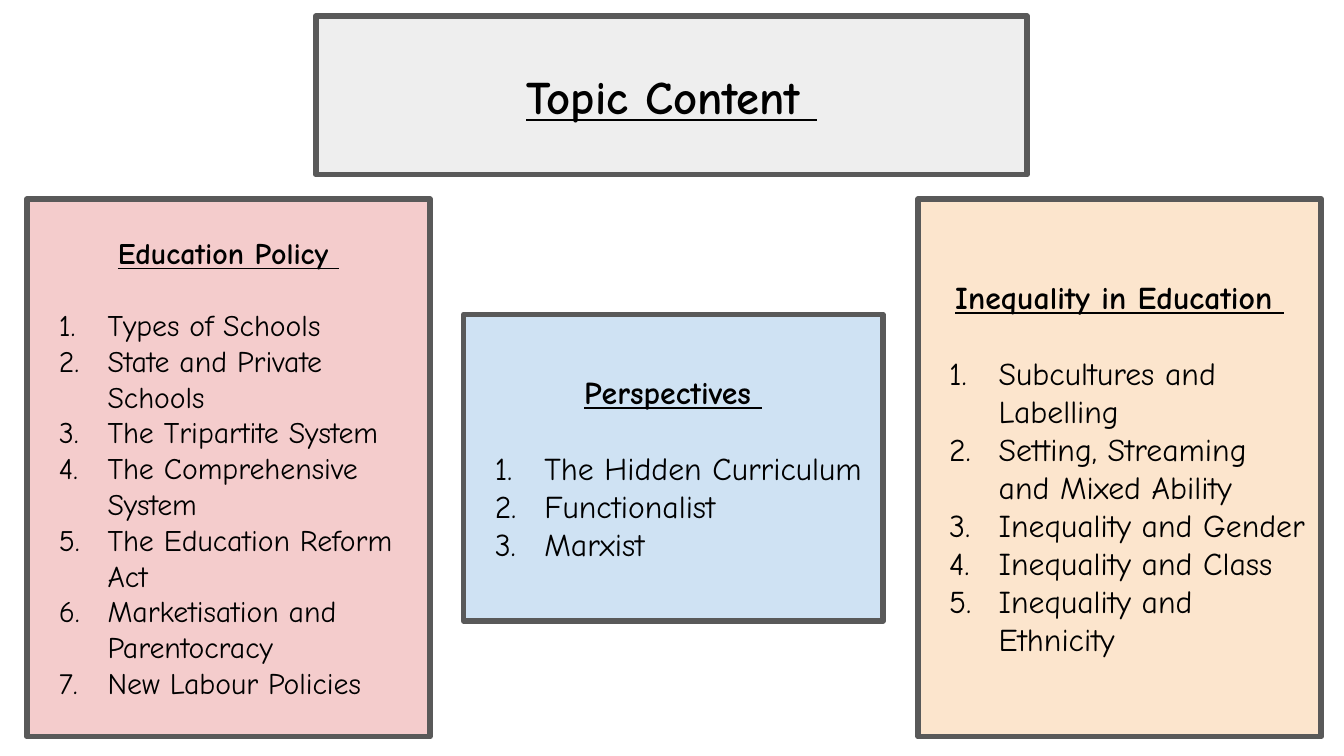
import dataclasses

import pptx
import pptx.dml.color
import pptx.enum.text
import pptx.util
from lxml import etree

Pt = pptx.util.Pt
FONT = "Comic Neue"
INK = "000000"
BORDER = "595959"
TITLE_FILL = "EEEEEE"
LIST_INDENT = 36
LINE_HEIGHT = 1.2  # height of one line relative to the font size
DRAWING_NS = "http://schemas.openxmlformats.org/drawingml/2006/main"


@dataclasses.dataclass
class Box:
    left: float
    top: float
    width: float
    height: float
    fill: str


@dataclasses.dataclass
class Topic:
    box: Box
    heading: str
    items: list[str]
    size: float
    hanging: float


TITLE_BOX = Box(169.2, 8.6, 381, 85, TITLE_FILL)

TOPICS = [
    Topic(
        Box(14.4, 106.6, 216, 288, "F4CCCC"),
        "Education Policy ",
        [
            "Types of Schools",
            "State and Private Schools",
            "The Tripartite System",
            "The Comprehensive System",
            "The Education Reform Act",
            "Marketisation and Parentocracy",
            "New Labour Policies",
        ],
        16,
        26,
    ),
    Topic(
        Box(248.4, 168.5, 224.6, 164.2, "CFE2F3"),
        "Perspectives ",
        ["The Hidden Curriculum", "Functionalist", "Marxist"],
        17,
        26.5,
    ),
    Topic(
        Box(491.8, 106.6, 216, 288, "FCE5CD"),
        "Inequality in Education ",
        [
            "Subcultures and Labelling",
            "Setting, Streaming and Mixed Ability",
            "Inequality and Gender",
            "Inequality and Class",
            "Inequality and Ethnicity",
        ],
        17,
        26.5,
    ),
]


def color(value: str) -> pptx.dml.color.RGBColor:
    return pptx.dml.color.RGBColor.from_string(value)


def style_box(holder, box: Box) -> None:
    """Place a placeholder and give it its fill, border and text frame."""
    holder.left, holder.top = Pt(box.left), Pt(box.top)
    holder.width, holder.height = Pt(box.width), Pt(box.height)
    holder.fill.solid()
    holder.fill.fore_color.rgb = color(box.fill)
    holder.line.color.rgb = color(BORDER)
    holder.line.width = Pt(3)
    frame = holder.text_frame
    frame.word_wrap = True
    frame.auto_size = pptx.enum.text.MSO_AUTO_SIZE.NONE
    frame.vertical_anchor = pptx.enum.text.MSO_ANCHOR.MIDDLE
    frame.margin_left = frame.margin_right = Pt(7.2)
    frame.margin_top = frame.margin_bottom = Pt(7.2)


def style_paragraph(paragraph, size: float, heading: bool) -> None:
    align = pptx.enum.text.PP_ALIGN
    paragraph.alignment = align.CENTER if heading else align.LEFT
    paragraph.space_before = paragraph.space_after = Pt(0)
    for run in paragraph.runs:
        run.font.name = FONT
        run.font.size = Pt(size)
        run.font.color.rgb = color(INK)
        run.font.bold = run.font.underline = heading


def add_mark(properties, tag: str, **attributes: str):
    return etree.SubElement(properties, f"{{{DRAWING_NS}}}{tag}", attributes)


def set_bullet(paragraph, numbered: bool, hanging: float) -> None:
    properties = paragraph._p.get_or_add_pPr()
    properties.set("marL", str(Pt(LIST_INDENT if numbered else 0)))
    properties.set("indent", str(-Pt(hanging) if numbered else 0))
    if numbered:
        add_mark(add_mark(properties, "buClr"), "srgbClr", val=INK)
        add_mark(properties, "buFont", typeface=FONT)
        add_mark(properties, "buAutoNum", type="arabicPeriod")
    else:
        add_mark(properties, "buNone")


def draw_topic(holder, topic: Topic) -> None:
    style_box(holder, topic.box)
    frame = holder.text_frame
    frame.text = "\n".join([topic.heading, *topic.items])
    for index, paragraph in enumerate(frame.paragraphs):
        heading = index == 0
        style_paragraph(paragraph, topic.size, heading)
        if heading:
            paragraph.space_after = Pt(topic.size * LINE_HEIGHT)
        set_bullet(paragraph, not heading, topic.hanging)


def main() -> None:
    presentation = pptx.Presentation()
    presentation.slide_width, presentation.slide_height = Pt(720), Pt(405)
    # The comparison layout has a title and four body placeholders
    slide = presentation.slides.add_slide(presentation.slide_layouts[4])

    # Title
    title = slide.shapes.title
    style_box(title, TITLE_BOX)
    title.text_frame.text = "Topic Content "
    style_paragraph(title.text_frame.paragraphs[0], 25, True)

    # Topic lists
    bodies = [holder for holder in slide.placeholders
              if holder.placeholder_format.idx > 0]
    for holder, topic in zip(bodies, TOPICS):
        draw_topic(holder, topic)

    # Placeholders left without a topic
    for spare in bodies[len(TOPICS):]:
        spare.element.getparent().remove(spare.element)

    presentation.save("out.pptx")


if __name__ == "__main__":
    main()
